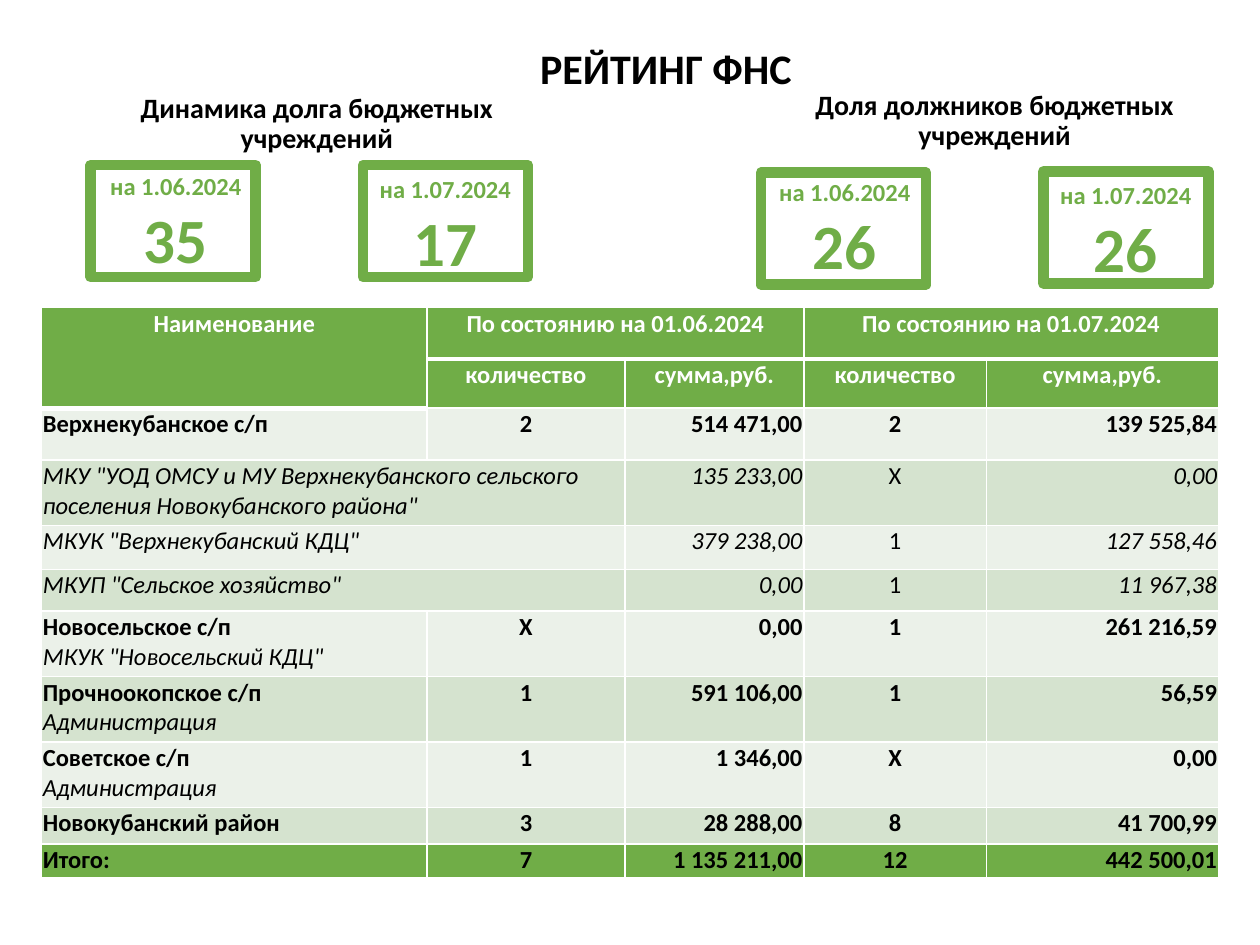
from lxml import etree
from pptx import Presentation
from pptx import util as u
from pptx.dml.color import RGBColor
from pptx.enum import shapes, text
from pptx.oxml.ns import qn

Inches, Pt = u.Inches, u.Pt
ALIGN = text.PP_ALIGN
FONT = "Calibri"
COLORS = {"green": "70AD47", "light": "EBF1E9", "medium": "D5E3CF",
          "white": "FFFFFF", "black": "000000"}

COLUMN_WIDTHS = [3.06, 1.57, 1.42, 1.45, 1.84]
ROW_HEIGHTS = [0.41, 0.39, 0.41, 0.52, 0.35, 0.33, 0.52, 0.52, 0.52, 0.29, 0.27]
HEADER_ROWS = [
    ["Наименование", "По состоянию на 01.06.2024", "", "По состоянию на 01.07.2024", ""],
    ["", "количество", "сумма,руб.", "количество", "сумма,руб."],
]
BODY_ROWS = [
    ["Верхнекубанское с/п", "2", "514 471,00", "2", "139 525,84"],
    ['МКУ "УОД ОМСУ и МУ Верхнекубанского сельского поселения Новокубанского района"',
     None, "135 233,00", "X", "0,00"],
    ['МКУК "Верхнекубанский КДЦ"', None, "379 238,00", "1", "127 558,46"],
    ['МКУП "Сельское хозяйство"', None, "0,00", "1", "11 967,38"],
    [("Новосельское с/п", 'МКУК "Новосельский КДЦ"'), "X", "0,00", "1", "261 216,59"],
    [("Прочноокопское с/п", "Администрация"), "1", "591 106,00", "1", "56,59"],
    [("Советское с/п", "Администрация"), "1", "1 346,00", "X", "0,00"],
    ["Новокубанский район", "3", "28 288,00", "8", "41 700,99"],
    ["Итого:", "7", "1 135 211,00", "12", "442 500,01"],
]
BODY_ALIGNMENTS = [ALIGN.LEFT, ALIGN.CENTER, ALIGN.RIGHT, ALIGN.CENTER, ALIGN.RIGHT]


def rgb(name):
    """Return the named colour."""
    return RGBColor.from_string(COLORS[name])


def style_font(font, size, color, bold=True, italic=False):
    """Set the face, size, colour and weight of a font."""
    font.name, font.size = FONT, Pt(size)
    font.bold, font.italic = bold, italic
    font.color.rgb = rgb(color)


def fill_heading(shape, box, wording, size):
    """Place a centred heading in its box."""
    shape.left, shape.top, shape.width, shape.height = map(Inches, box)
    frame = shape.text_frame
    frame.word_wrap = True
    frame.auto_size = text.MSO_AUTO_SIZE.NONE
    frame.vertical_anchor = text.MSO_ANCHOR.MIDDLE
    paragraph = frame.paragraphs[0]
    paragraph.text = wording
    paragraph.alignment = ALIGN.CENTER
    paragraph.line_spacing = 0.9
    style_font(paragraph.font, size, "black")


def add_card(slide, frame_at, text_at, date, value):
    """Add a dated figure and the green frame around it."""
    label = slide.shapes.add_textbox(*map(Inches, (*text_at, 1.31, 0.94)))
    label.text_frame.word_wrap = True
    label.text_frame.auto_size = text.MSO_AUTO_SIZE.SHAPE_TO_FIT_TEXT
    label.text_frame.text = f"{date}\n{value}"
    for paragraph, size in zip(label.text_frame.paragraphs, (14, 36)):
        paragraph.alignment = ALIGN.CENTER
        style_font(paragraph.font, size, "green")
    border = slide.shapes.add_shape(shapes.MSO_SHAPE.RECTANGLE,
                                    *map(Inches, (*frame_at, 1.31, 0.89)))
    border.shadow.inherit = False
    border.fill.background()
    border.line.color.rgb = rgb("green")
    border.line.width = Pt(6)


def add_indicator(slide, box, heading, cards):
    """Add one indicator: its heading and its cards."""
    textbox = slide.shapes.add_textbox(*map(Inches, box))
    fill_heading(textbox, box, heading, 16)
    for card in cards:
        add_card(slide, *card)


def style_cell(cell, fill, bottom_width):
    """Set the margins, white borders and fill of a cell."""
    cell.margin_left = cell.margin_top = cell.margin_right = Inches(0.01)
    cell.margin_bottom = 0
    properties = cell._tc.get_or_add_tcPr()
    for side, width in (("L", 1), ("R", 1), ("T", 1), ("B", bottom_width)):
        line = etree.SubElement(properties, qn(f"a:ln{side}"), w=str(Pt(width)))
        solid = etree.SubElement(line, qn("a:solidFill"))
        etree.SubElement(solid, qn("a:srgbClr"), val=COLORS["white"])
    cell.fill.solid()
    cell.fill.fore_color.rgb = rgb(fill)


def write_cell(cell, content, alignment, color, bold=True, italic=False):
    """Write a cell; a pair becomes a bold line above an italic one."""
    paragraph = cell.text_frame.paragraphs[0]
    paragraph.alignment = alignment
    style_font(paragraph.font, 14, color, bold, italic)
    lines = content if isinstance(content, tuple) else (content,)
    for index, wording in enumerate(lines):
        if index:
            paragraph.add_line_break()
        run = paragraph.add_run()
        run.text = wording
        style_font(run.font, 14, color, bold and not index, italic or index > 0)


def add_debt_table(slide, box):
    """Add the table of debts by settlement."""
    table = slide.shapes.add_table(len(ROW_HEIGHTS), len(COLUMN_WIDTHS),
                                   *map(Inches, box)).table
    for column, width in zip(table.columns, COLUMN_WIDTHS):
        column.width = Inches(width)
    for row, height in zip(table.rows, ROW_HEIGHTS):
        row.height = Inches(height)
    table.cell(0, 0).merge(table.cell(1, 0))
    for first in (1, 3):
        table.cell(0, first).merge(table.cell(0, first + 1))

    for row, values in enumerate(HEADER_ROWS):
        for column, value in enumerate(values):
            cell = table.cell(row, column)
            style_cell(cell, "green", 3 if row == 0 or column == 0 else 1)
            if value:
                write_cell(cell, value, ALIGN.CENTER, "white")

    last = len(BODY_ROWS) - 1
    for index, values in enumerate(BODY_ROWS):
        row = index + len(HEADER_ROWS)
        detail = values[1] is None
        fill = "green" if index == last else ("light", "medium")[index % 2]
        if detail:
            table.cell(row, 0).merge(table.cell(row, 1))
        for column, value in enumerate(values):
            cell = table.cell(row, column)
            style_cell(cell, fill, 1)
            if value is not None:
                write_cell(cell, value, BODY_ALIGNMENTS[column], "black",
                           not detail, detail and column != 3)


def main():
    """Build the rating slide and save it."""
    presentation = Presentation()
    presentation.slide_width, presentation.slide_height = Inches(10), Inches(7.5)
    slide = presentation.slides.add_slide(presentation.slide_layouts[5])
    fill_heading(slide.shapes.title, (1.88, 0.14, 6.81, 0.85), "РЕЙТИНГ ФНС", 24)
    add_debt_table(slide, (0.33, 2.44, sum(COLUMN_WIDTHS), sum(ROW_HEIGHTS)))
    add_indicator(slide, (0.65, 0.56, 3.73, 0.85), "Динамика долга бюджетных учреждений", [
        ((0.72, 1.31), (0.74, 1.31), "на 1.06.2024", "35"),
        ((2.88, 1.31), (2.88, 1.33), "на 1.07.2024", "17"),
    ])
    add_indicator(slide, (6.03, 0.54, 3.73, 0.85), "Доля должников бюджетных учреждений", [
        ((6.04, 1.37), (6.05, 1.36), "на 1.06.2024", "26"),
        ((8.28, 1.36), (8.28, 1.38), "на 1.07.2024", "26"),
    ])
    presentation.save("out.pptx")


if __name__ == "__main__":
    main()
